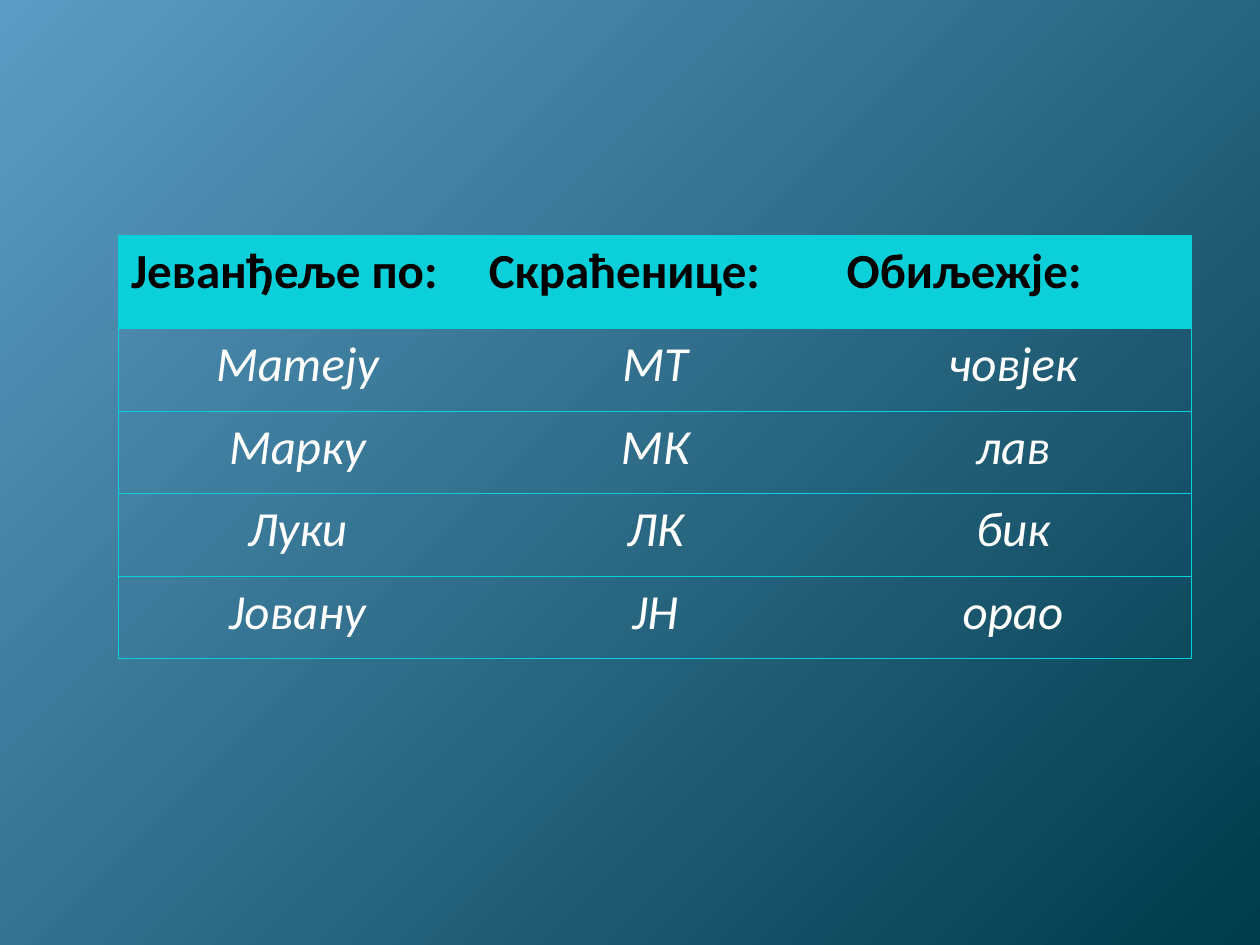
from pptx import Presentation, util as u
from pptx.dml.color import RGBColor
from pptx.enum import text
from pptx.oxml import parse_xml
from pptx.oxml.ns import nsdecls

# Content
HEADINGS = ["Јеванђеље по:", "Скраћенице:", "Обиљежје:"]
GOSPELS = [
    ("Матеју", "МТ", "човјек"),
    ("Марку", "МК", "лав"),
    ("Луки", "ЛК", "бик"),
    ("Јовану", "ЈН", "орао"),
]

THEME = {
    "font": "Calibri", "size": 28,
    "sky": "5C9CC4", "deep": "003B4B",
    "header": "0BD0D9", "border": "06D0D9", "border_width": 0.75,
    "heading": "000000", "body": "FFFFFF",
}
LEFT, TOP, WIDTH, HEIGHT = 0.94, 1.87, 8.52, 3.36
HEADER_HEIGHT = 0.74


def write(cell, words, color, bold=False, italic=False, align=text.PP_ALIGN.LEFT):
    paragraph = cell.text_frame.paragraphs[0]
    paragraph.alignment = align
    run = paragraph.add_run()
    run.text = words
    font = run.font
    font.name, font.size = THEME["font"], u.Pt(THEME["size"])
    font.bold, font.italic = bold, italic
    font.color.rgb = RGBColor.from_string(color)


def draw_borders(cell, sides):
    """Line the named sides of a cell and clear the others."""
    line = f'<a:solidFill><a:srgbClr val="{THEME["border"]}"/></a:solidFill>'
    width = u.Pt(THEME["border_width"])
    properties = cell._tc.get_or_add_tcPr()
    for side in "LRTB":
        paint = line if side in sides else "<a:noFill/>"
        properties.append(parse_xml(
            f'<a:ln{side} {nsdecls("a")} w="{width}">{paint}</a:ln{side}>'))


prs = Presentation()
prs.slide_width, prs.slide_height = u.Inches(10), u.Inches(7.5)
slide = prs.slides.add_slide(prs.slide_layouts[6])

# Diagonal background, light at the top left
backdrop = slide.background.fill
backdrop.gradient()
backdrop.gradient_angle = 315
for stop, shade in zip(backdrop.gradient_stops, ("sky", "deep")):
    stop.color.rgb = RGBColor.from_string(THEME[shade])

# Table of gospels
rows = [HEADINGS, *GOSPELS]
gospels = slide.shapes.add_table(
    len(rows), len(HEADINGS),
    *(u.Inches(n) for n in (LEFT, TOP, WIDTH, HEIGHT))).table
gospels.horz_banding = False
for column in gospels.columns:
    column.width = u.Inches(WIDTH / len(HEADINGS))

for r, entries in enumerate(rows):
    height = HEADER_HEIGHT if r == 0 else (HEIGHT - HEADER_HEIGHT) / len(GOSPELS)
    gospels.rows[r].height = u.Inches(height)
    for c, words in enumerate(entries):
        cell = gospels.cell(r, c)
        # Horizontal rules everywhere, vertical ones on the outside only
        draw_borders(cell, "TB" + "L" * (c == 0) + "R" * (c == len(entries) - 1))
        if r == 0:
            cell.fill.solid()
            cell.fill.fore_color.rgb = RGBColor.from_string(THEME["header"])
            write(cell, words, THEME["heading"], bold=True)
        else:
            cell.fill.background()
            write(cell, words, THEME["body"], italic=True, align=text.PP_ALIGN.CENTER)

prs.save("out.pptx")
